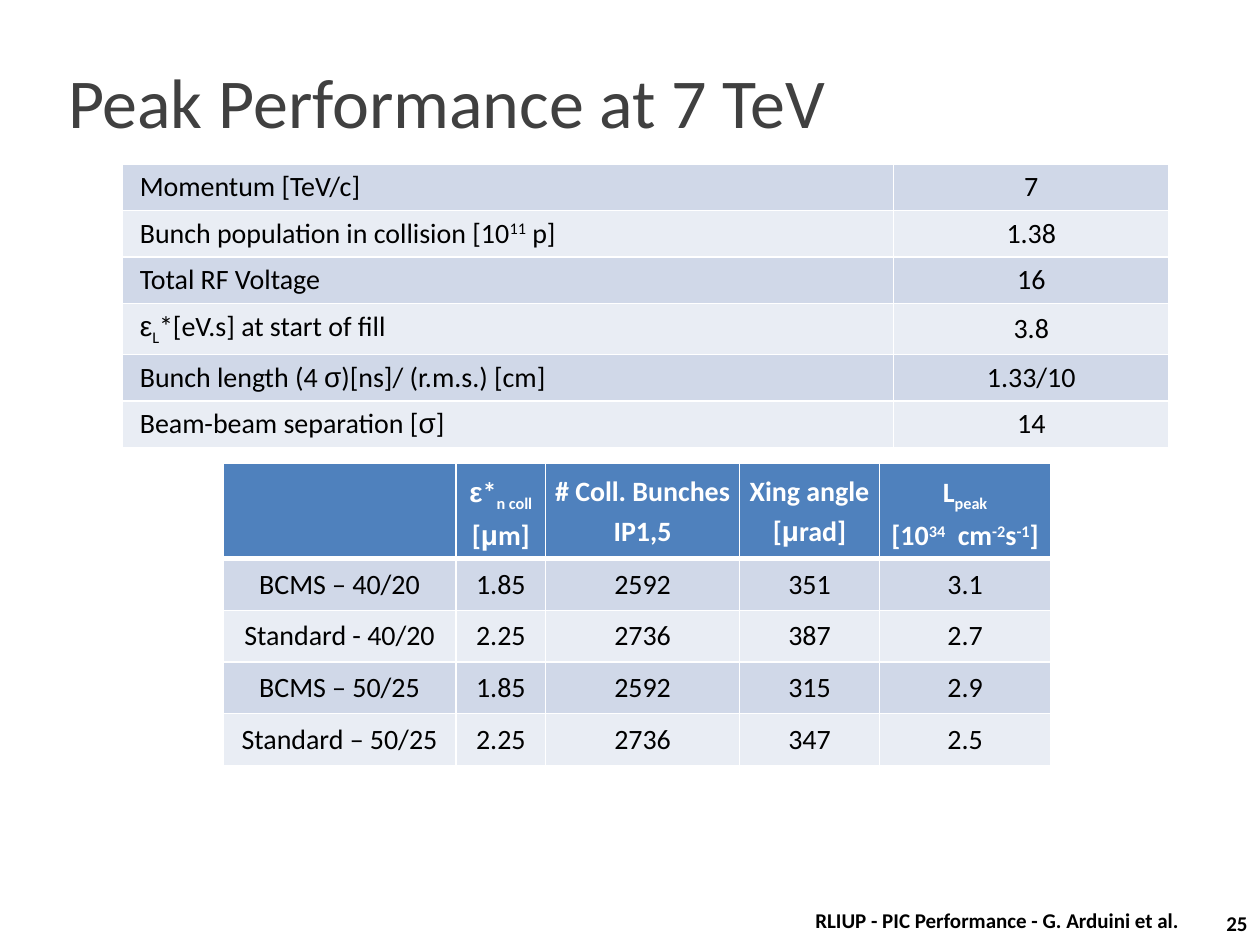
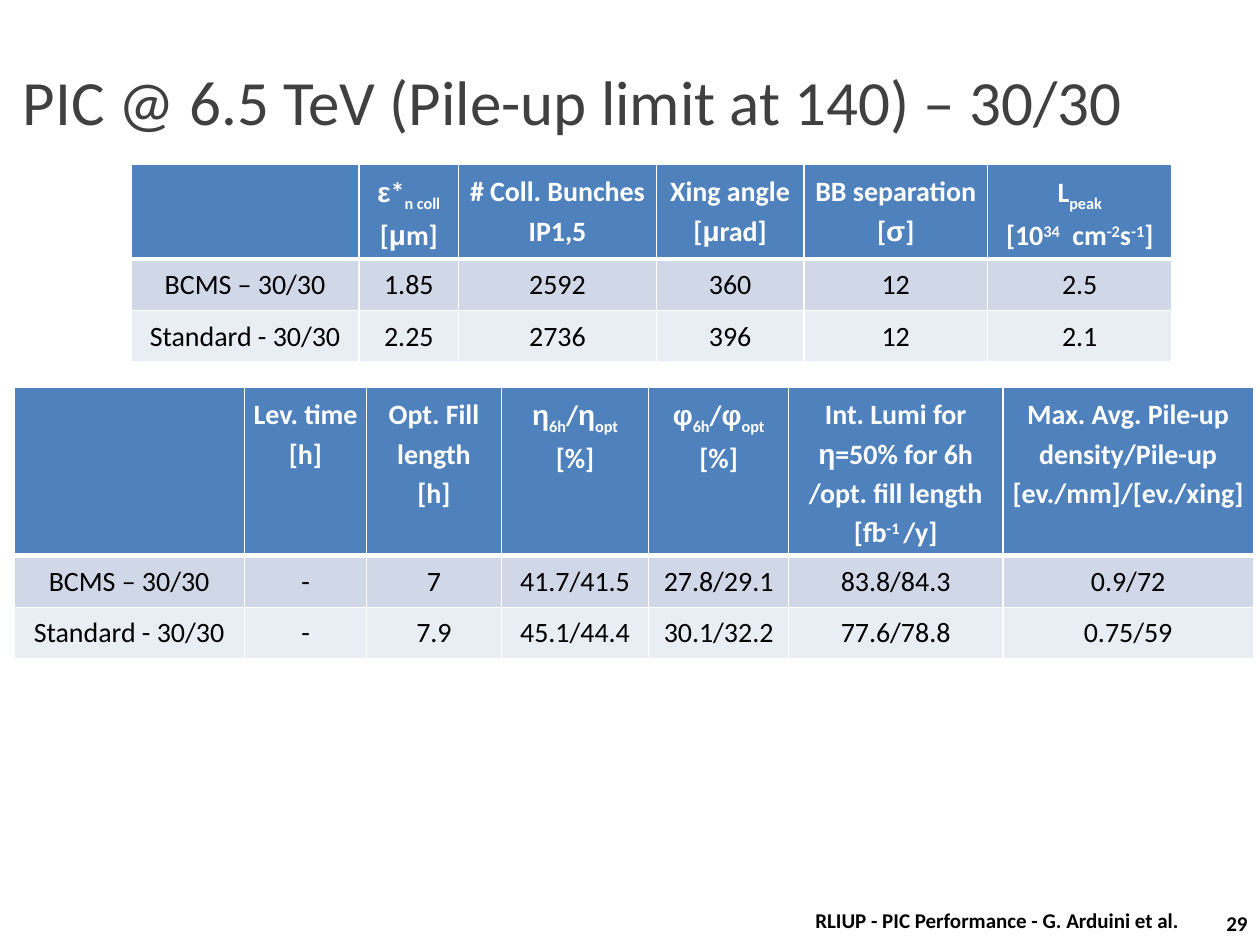
"""Build two slides of collider peak performance tables."""
from dataclasses import dataclass
from itertools import groupby

from lxml import etree
from pptx import Presentation
from pptx.dml.color import RGBColor
from pptx.enum.text import MSO_ANCHOR, PP_ALIGN
from pptx.oxml.ns import qn
from pptx.util import Inches, Pt

LEFT, MID, RIGHT = PP_ALIGN.LEFT, PP_ALIGN.CENTER, PP_ALIGN.RIGHT
TOP, CENTRE = MSO_ANCHOR.TOP, MSO_ANCHOR.MIDDLE


@dataclass(frozen=True)
class Theme:
    font: str = "Calibri"
    greek: str = "Arial"
    title: str = "404040"
    ink: str = "000000"
    white: str = "FFFFFF"
    head: str = "4F81BD"
    bands: tuple = ("D0D8E8", "E9EDF4")
    body: int = 16
    small: int = 12
    thin: int = 1
    thick: int = 3
    lead: float = 1.15


T = Theme()
BASE = {"^": "30000", "_": "-25000"}
FOOT = "RLIUP - PIC Performance - G. Arduini et al."

# In texts, "|" parts runs; "^" and "_" at the start of a run raise and lower it.
EMIT = "ε*|_n coll\n[μm]"
BUNCH = "# Coll. Bunches IP1,5"
XING = "Xing angle\n[μrad]"
PEAK = "L|_peak\n[10|^34|  cm|^-2|s|^-1|]"

SLIDES = [
    {
        "title": "Peak Performance at 7 TeV", "size": 40,
        "box": (0.5, 0.3, 9, 1), "page": "25",
        "tables": [
            {
                "at": (1.77, 3.68), "cols": (1.85, 0.71, 1.54, 1.11, 1.36),
                "tall": 0.41, "first": 0.75,
                "head": ("", EMIT, BUNCH, XING, PEAK),
                "rows": [
                    ("BCMS – 40/20", "1.85", "2592", "351", "3.1"),
                    ("Standard - 40/20", "2.25", "2736", "387", "2.7"),
                    ("BCMS – 50/25", "1.85", "2592", "315", "2.9"),
                    ("Standard – 50/25", "2.25", "2736", "347", "2.5"),
                ],
            },
            {
                "at": (0.97, 1.3), "cols": (6.12, 2.19), "tall": 0.37,
                "pad": 0.14, "align": LEFT,
                "rows": [
                    ("Momentum [TeV/c]", "7"),
                    ("Bunch population in collision [10|^11| p]", "1.38"),
                    ("Total RF Voltage", "16"),
                    ("ε|_L|*[eV.s] at start of fill", "3.8"),
                    ("Bunch length (4 σ)[ns]/ (r.m.s.) [cm]", "1.33/10"),
                    ("Beam-beam separation [σ]", "14"),
                ],
            },
        ],
    },
    {
        "title": "PIC @ 6.5 TeV (Pile-up limit at 140) – 30/30", "size": 36,
        "box": (0.14, 0.3, 9.65, 1), "page": "29",
        "tables": [
            {
                "at": (0.11, 3.07),
                "cols": (1.83, 0.97, 1.07, 1.17, 1.11, 1.7, 1.99),
                "tall": 0.41, "first": 1.34,
                "head": (
                    "", "Lev. time\n[h]", "Opt. Fill length\n[h]",
                    "η|_6h|/η|_opt\n[%]", "φ|_6h|/φ|_opt\n[%]",
                    "Int. Lumi for η=50% for 6h /opt. fill length\n[fb|^-1 |/y]",
                    "Max. Avg. Pile-up density/Pile-up\n[ev./mm]/[ev./xing]",
                ),
                "rows": [
                    ("BCMS – 30/30", "-", "7", "41.7/41.5", "27.8/29.1",
                     "83.8/84.3", "0.9/72"),
                    ("Standard - 30/30", "-", "7.9", "45.1/44.4", "30.1/32.2",
                     "77.6/78.8", "0.75/59"),
                ],
            },
            {
                "at": (1.04, 1.3), "cols": (1.81, 0.79, 1.57, 1.17, 1.46, 1.46),
                "tall": 0.41, "first": 0.75,
                "head": ("", EMIT, BUNCH, XING, "BB separation [σ]", PEAK),
                "rows": [
                    ("BCMS – 30/30", "1.85", "2592", "360", "12", "2.5"),
                    ("Standard - 30/30", "2.25", "2736", "396", "12", "2.1"),
                ],
            },
        ],
    },
]


def is_greek(char):
    return "α" <= char <= "ω"


def write(frame, text, size, color, bold=False, align=LEFT, lead=None):
    for num, line in enumerate(text.split("\n")):
        para = frame.add_paragraph() if num else frame.paragraphs[0]
        para.alignment = align
        if lead:
            para.line_spacing = lead
        for part in line.split("|"):
            base = BASE.get(part[:1])
            for greek, chars in groupby(part[1:] if base else part, is_greek):
                run = para.add_run()
                run.text = "".join(chars)
                font = run.font
                font.name = T.greek if greek else T.font
                font.size, font.bold = Pt(size), bold
                font.color.rgb = RGBColor.from_string(color)
                if base:
                    run._r.get_or_add_rPr().set("baseline", base)


def add_text(slide, box, text, size, color, pad, **style):
    frame = slide.shapes.add_textbox(*map(Inches, box)).text_frame
    frame.word_wrap, frame.vertical_anchor = True, CENTRE
    frame.margin_left = frame.margin_right = Inches(pad)
    frame.margin_top = frame.margin_bottom = 0
    write(frame, text, size, color, **style)


def rule(cell, **edges):
    props = cell._tc.get_or_add_tcPr()
    for side in "LRTB":
        wide = Pt(edges.get(side, T.thin))
        line = etree.SubElement(props, qn(f"a:ln{side}"), w=str(wide))
        fill = etree.SubElement(line, qn("a:solidFill"))
        etree.SubElement(fill, qn("a:srgbClr"), val=T.white)


def paint(cell, color, pad, anchor):
    cell.fill.solid()
    cell.fill.fore_color.rgb = RGBColor.from_string(color)
    cell.margin_left = cell.margin_right = Inches(pad)
    cell.margin_top = cell.margin_bottom = Inches(0.05)
    cell.vertical_anchor = anchor


def add_grid(slide, data):
    head, cols, tall = data.get("head"), data["cols"], data["tall"]
    rows = ([head] if head else []) + data["rows"]
    highs = [tall] * len(rows)
    highs[0] = data.get("first", tall)
    area = map(Inches, (*data["at"], sum(cols), sum(highs)))
    grid = slide.shapes.add_table(len(rows), len(cols), *area).table
    grid.first_row, grid.horz_banding = bool(head), False
    for col, wide in zip(grid.columns, cols):
        col.width = Inches(wide)
    for r, (row, high) in enumerate(zip(rows, highs)):
        grid.rows[r].height = Inches(high)
        for c, text in enumerate(row):
            cell = grid.cell(r, c)
            if head and r == 0:
                rule(cell, B=T.thick)
                paint(cell, T.head, 0.04, TOP)
                write(cell.text_frame, text, T.body, T.white, True, MID, T.lead)
            else:
                rule(cell, T=T.thick if head and r == 1 else T.thin)
                band = T.bands[(r - bool(head)) % 2]
                paint(cell, band, data.get("pad", 0.1), CENTRE)
                align = MID if c else data.get("align", MID)
                write(cell.text_frame, text, T.body, T.ink, align=align)


def main():
    deck = Presentation()
    deck.slide_width, deck.slide_height = Inches(10), Inches(7.5)
    for data in SLIDES:
        slide = deck.slides.add_slide(deck.slide_layouts[6])
        add_text(slide, data["box"], data["title"], data["size"], T.title, 0.04)
        for grid in data["tables"]:
            add_grid(slide, grid)
        add_text(slide, (6.33, 7.1, 3.17, 0.4), FOOT, T.small, T.ink, 0.1,
                 bold=True, align=MID)
        add_text(slide, (9.5, 7.15, 0.5, 0.35), data["page"], T.small, T.ink, 0.1,
                 bold=True, align=RIGHT)
    deck.save("out.pptx")


if __name__ == "__main__":
    main()
